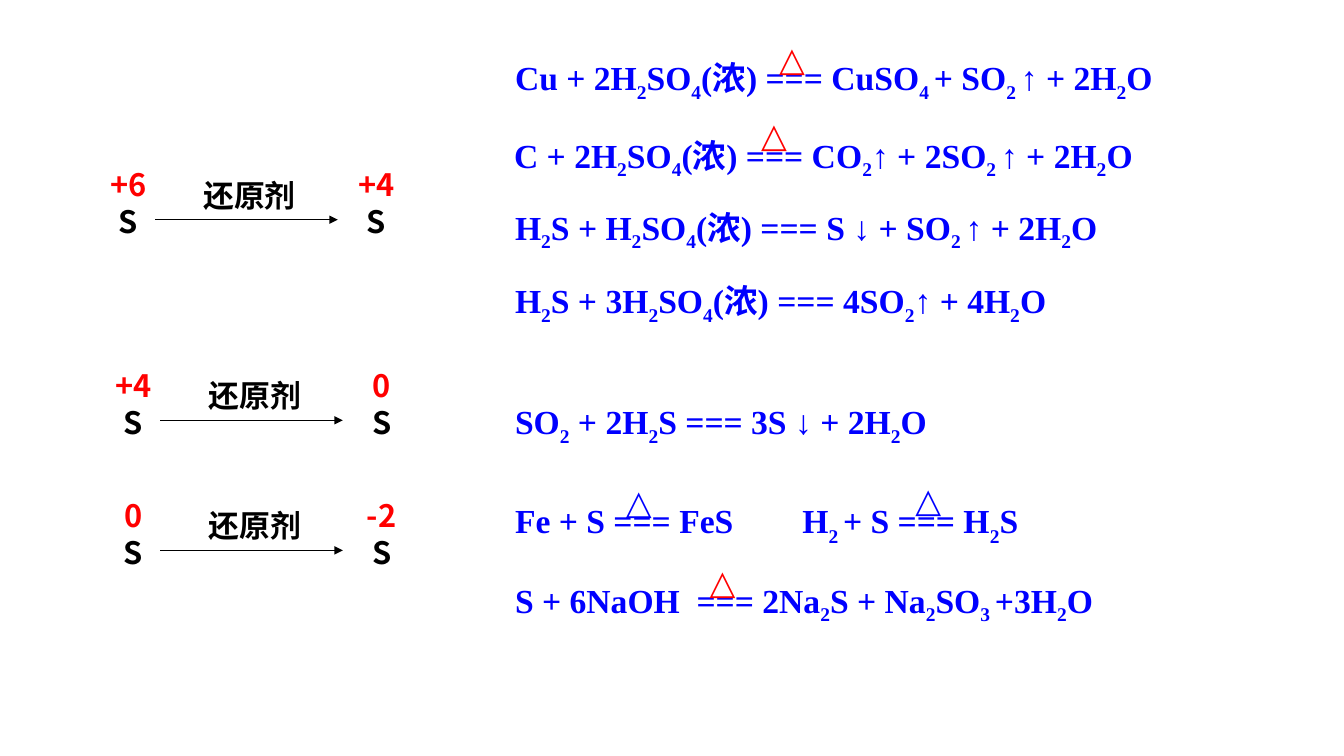
from lxml.etree import SubElement
from pptx import Presentation
from pptx.dml.color import RGBColor
from pptx.enum.lang import MSO_LANGUAGE_ID as Language
from pptx.enum.shapes import MSO_CONNECTOR as Connector
from pptx.enum.text import MSO_AUTO_SIZE as AutoSize, PP_ALIGN as Align
from pptx.oxml.ns import qn
from pptx.util import Pt

EMU_PER_PX = 9144
COLORS = {"black": "000000", "red": "FF0000", "blue": "0000FF"}
SYMBOL_FORMAT = {"name": "Noto Sans CJK SC", "size": Pt(22), "bold": True}
LABEL_FORMAT = {"name": "Arial", "size": Pt(22), "bold": True,
                "language_id": Language.SIMPLIFIED_CHINESE}
EQUATION_FORMAT = {"name": "Times New Roman", "size": Pt(24), "bold": True,
                   "language_id": Language.SIMPLIFIED_CHINESE}

REDUCTIONS = [
    (96, 160, "+6", "+4"),
    (101, 359, "+4", "0"),
    (101, 488, "0", "-2"),
]
EQUATIONS = [
    (501, 52, 693, "Cu + 2H|2|SO|4|(浓) === CuSO|4 |+ SO|2 |↑ + 2H|2|O", -25),
    (500, 129, 669, "C + 2H|2|SO|4|(浓) === CO|2|↑ + 2SO|2 |↑ + 2H|2|O", -25),
    (501, 200, 681, "H|2|S + H|2|SO|4|(浓) === S ↓ + SO|2 |↑ + 2H|2|O", -25),
    (501, 273, 586, "H|2|S + 3H|2|SO|4|(浓) === 4SO|2|↑ + 4H|2|O", -25),
    (501, 393, 475, "SO|2| + 2H|2|S === 3S ↓ + 2H|2|O", -25),
    (501, 491, 259, "Fe + S === FeS", -30),
    (786, 491, 273, "H|2 |+ S === H|2|S", -30),
    (501, 570, 650, "S + 6NaOH  === 2Na|2|S + Na|2|SO|3 |+3H|2|O", -25),
]
HEAT_SIGNS = [
    (763, 33, 41, "red"),
    (745, 108, 41, "red"),
    (611, 472, 55, "blue"),
    (898, 470, 48, "blue"),
    (694, 552, 51, "red"),
]


def px(length):
    """Turn a length in px into EMU."""
    return length * EMU_PER_PX


def add_run(paragraph, text, color, values):
    """Add a run with the given colour and font values."""
    run = paragraph.add_run()
    run.text = text
    for name, value in values.items():
        setattr(run.font, name, value)
    run.font.color.rgb = RGBColor.from_string(COLORS[color])
    return run


def add_box(slide, left, top, width, height):
    """Add a wrapping text box and return its text frame."""
    shape = slide.shapes.add_textbox(px(left), px(top), px(width), px(height))
    frame = shape.text_frame
    frame.word_wrap = True
    frame.auto_size = AutoSize.SHAPE_TO_FIT_TEXT
    return frame


def add_text(slide, left, top, width, height, text, color, values):
    """Add a text box with one plain run."""
    frame = add_box(slide, left, top, width, height)
    add_run(frame.paragraphs[0], text, color, values)


def add_sulfur(slide, left, top, state):
    """Add the sulfur symbol below its oxidation state."""
    frame = add_box(slide, left, top, 63, 84)
    paragraphs = [frame.paragraphs[0], frame.add_paragraph()]
    for paragraph, text, color in zip(paragraphs, (state, "S"), ("red", "black")):
        paragraph.alignment = Align.CENTER
        add_run(paragraph, text, color, SYMBOL_FORMAT)


def add_arrow(slide, left, right, y):
    """Add a thin horizontal arrow pointing right."""
    arrow = slide.shapes.add_connector(
        Connector.STRAIGHT, px(left), px(y), px(right), px(y))
    arrow.line.width = Pt(0.5)
    arrow.line.color.rgb = RGBColor.from_string(COLORS["black"])
    SubElement(arrow.line._get_or_add_ln(), qn("a:tailEnd"), type="triangle")
    SubElement(arrow._element.spPr, qn("a:effectLst"))


def add_reduction(slide, left, top, before, after):
    """Add one reduction step from a sulfur state to a lower one."""
    add_sulfur(slide, left, top, before)
    add_sulfur(slide, left + 246, top, after)
    add_arrow(slide, left + 58, left + 239, top + 58)
    add_text(slide, left + 96, top + 10, 114, 47, "还原剂", "black", LABEL_FORMAT)


def add_equation(slide, left, top, width, formula, drop):
    """Add an equation whose every second part is a subscript."""
    paragraph = add_box(slide, left, top, width, 50).paragraphs[0]
    for index, part in enumerate(formula.split("|")):
        run = add_run(paragraph, part, "blue", EQUATION_FORMAT)
        if index % 2:
            run.font._element.set("baseline", str(drop * 1000))


def main():
    """Build the slide of sulfur reactions and save it."""
    presentation = Presentation()
    presentation.slide_width = px(1333)
    presentation.slide_height = px(750)
    slide = presentation.slides.add_slide(presentation.slide_layouts[6])
    for reduction in REDUCTIONS:
        add_reduction(slide, *reduction)
    for equation in EQUATIONS:
        add_equation(slide, *equation)
    for left, top, width, color in HEAT_SIGNS:
        add_text(slide, left, top, width, 50, "△", color, EQUATION_FORMAT)
    presentation.save("out.pptx")


if __name__ == "__main__":
    main()
